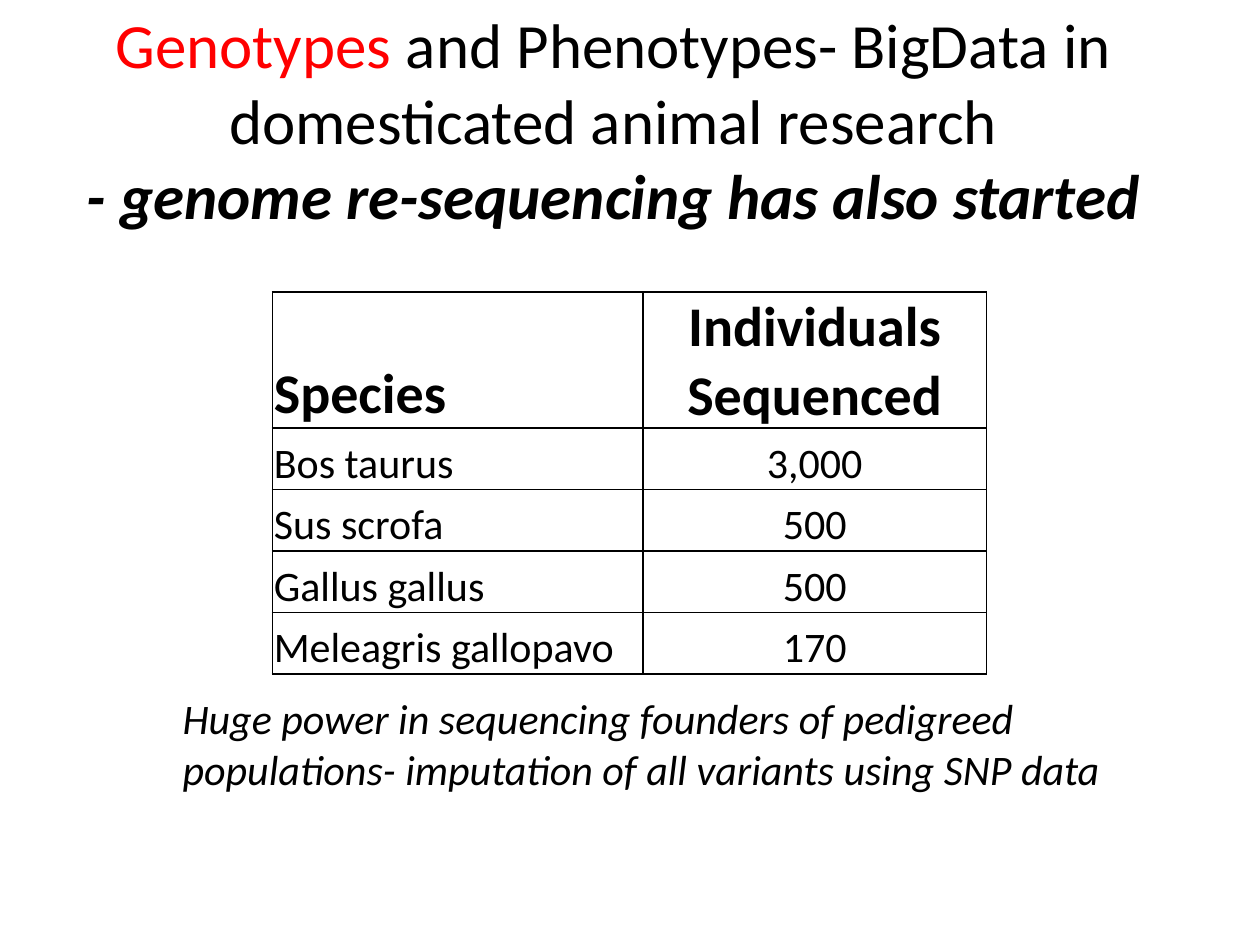
from pptx import Presentation
from pptx.dml.color import RGBColor
from pptx.enum.text import MSO_ANCHOR, MSO_AUTO_SIZE, PP_ALIGN
from pptx.oxml import parse_xml
from pptx.oxml.ns import nsdecls
from pptx.util import Cm, Pt

BLACK = "000000"
RED = "FF0000"


def colour(hex_text):
    return RGBColor.from_string(hex_text)


class SlideWriter:
    """Holds the type style and the slide being filled."""

    font_name = "Calibri"
    border_width = Pt(1)

    def __init__(self, slide):
        self.slide = slide

    def run(self, para, text, size, hex_text=BLACK, bold=False, italic=False):
        span = para.add_run()
        span.text = text
        font = span.font
        font.name = self.font_name
        font.size = Pt(size)
        font.bold = bold
        font.italic = italic
        font.color.rgb = colour(hex_text)

    def text_box(self, left, top, width, height, anchor=MSO_ANCHOR.TOP):
        box = self.slide.shapes.add_textbox(Cm(left), Cm(top), Cm(width), Cm(height))
        frame = box.text_frame
        frame.word_wrap = True
        frame.vertical_anchor = anchor
        return frame

    def border(self, cell):
        properties = cell._tc.get_or_add_tcPr()
        for index, side in enumerate(("lnL", "lnR", "lnT", "lnB")):
            properties.insert(index, parse_xml(
                f'<a:{side} {nsdecls("a")} w="{self.border_width}"><a:solidFill>'
                f'<a:srgbClr val="{BLACK}"/></a:solidFill></a:{side}>'))

    def cell(self, cell, text, size, bold, align):
        cell.fill.background()
        cell.margin_left = cell.margin_right = cell.margin_top = Cm(0.03)
        cell.margin_bottom = 0
        cell.vertical_anchor = MSO_ANCHOR.BOTTOM
        para = cell.text_frame.paragraphs[0]
        para.alignment = align
        self.run(para, text, size, bold=bold)
        self.border(cell)

    def table(self, left, top, widths, heights, rows):
        frame = self.slide.shapes.add_table(
            len(rows), len(widths), Cm(left), Cm(top), Cm(sum(widths)), Cm(sum(heights)))
        table = frame.table
        table.first_row = table.horz_banding = False
        for column, width in zip(table.columns, widths):
            column.width = Cm(width)
        for row_index, (row, height) in enumerate(zip(rows, heights)):
            table.rows[row_index].height = Cm(height)
            header = row_index == 0
            for column_index, text in enumerate(row):
                self.cell(table.cell(row_index, column_index), text,
                          size=32 if header else 24, bold=header,
                          align=PP_ALIGN.CENTER if column_index else PP_ALIGN.LEFT)


def main():
    deck = Presentation()
    deck.slide_width, deck.slide_height = Cm(25.4), Cm(19.05)
    page = SlideWriter(deck.slides.add_slide(deck.slide_layouts[6]))

    # Title, raised within its box by a deep bottom margin
    title = page.text_box(1.24, 1.32, 22.25, 4.09, MSO_ANCHOR.MIDDLE)
    title.margin_bottom = Cm(2.05)
    para = title.paragraphs[0]
    para.alignment = PP_ALIGN.CENTER
    page.run(para, "Genotypes", 36, RED)
    page.run(para, " and Phenotypes- BigData in domesticated animal research", 36)
    para.add_line_break()
    page.run(para, "- genome re-sequencing has also started", 36, bold=True, italic=True)

    # Sequenced individuals by species
    rows = [
        ("Species", "Individuals Sequenced"),
        ("Bos taurus", "3,000"),
        ("Sus scrofa", "500"),
        ("Gallus gallus", "500"),
        ("Meleagris gallopavo", "170"),
    ]
    page.table(5.49, 5.89, (7.47, 6.93), [2.72] + [1.24] * 4, rows)

    # Closing remark
    remark = page.text_box(3.43, 13.84, 19.05, 2.31)
    remark.auto_size = MSO_AUTO_SIZE.SHAPE_TO_FIT_TEXT
    page.run(remark.paragraphs[0],
             "Huge power in sequencing founders of pedigreed populations- "
             "imputation of all variants using SNP data", 24, italic=True)

    deck.save("out.pptx")


if __name__ == "__main__":
    main()
